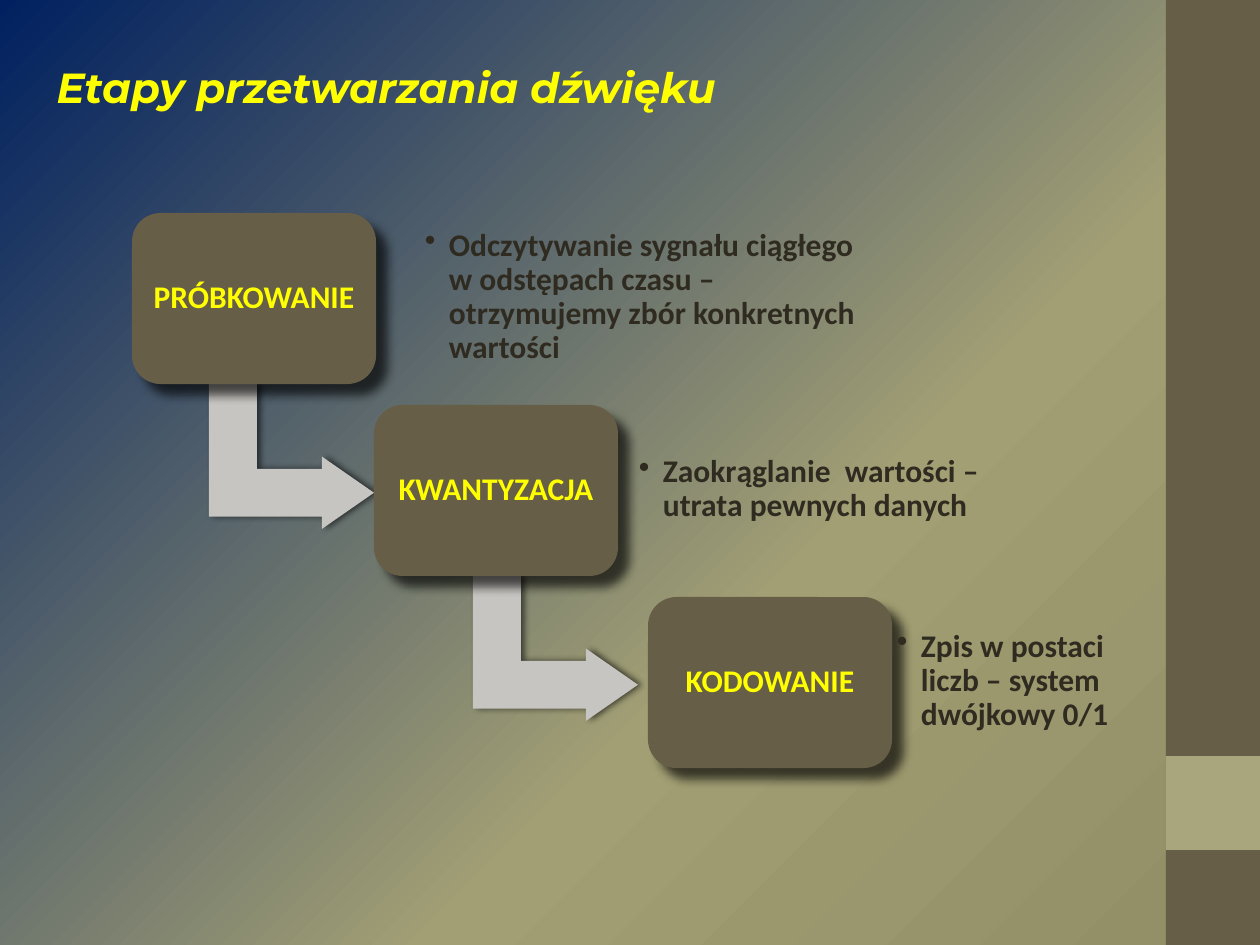
"""Build a slide showing the stages of sound processing as a stepped flow."""
from dataclasses import dataclass

from lxml import etree
from pptx import Presentation
from pptx.dml.color import RGBColor
from pptx.enum.shapes import MSO_SHAPE
from pptx.enum.text import MSO_ANCHOR, PP_ALIGN
from pptx.oxml.ns import qn
from pptx.util import Emu, Pt

RECTANGLE = MSO_SHAPE.RECTANGLE
ROUNDED = MSO_SHAPE.ROUNDED_RECTANGLE
BENT_ARROW = MSO_SHAPE.BENT_UP_ARROW
MIDDLE = MSO_ANCHOR.MIDDLE
LEFT, CENTER = PP_ALIGN.LEFT, PP_ALIGN.CENTER

TITLE_ONLY = 5
EMU_PER_PX = 914400 / 126
WIDTH, HEIGHT = 1260, 945
SIDEBAR_LEFT, ACCENT_TOP, ACCENT_SIZE = 1166, 756, 94
FIRST_TOP, ROW_STEP = 213, 192
BOX_WIDTH, BOX_HEIGHT = 244, 171
ARROW_WIDTH, ARROW_HEIGHT = 145, 165
NOTE_OFFSET, NOTE_HEIGHT = 16, 137
INSET, BULLET_INDENT = 9, 24

STAGES = [
    ("PRÓBKOWANIE", 132, 209, 416, 455,
     "Odczytywanie sygnału ciągłego w odstępach czasu – "
     "otrzymujemy zbór konkretnych wartości"),
    ("KWANTYZACJA", 374, 473, 630, 401,
     "Zaokrąglanie  wartości – utrata pewnych danych"),
    ("KODOWANIE", 648, None, 888, 241,
     "Zpis w postaci liczb – system dwójkowy 0/1"),
]


@dataclass(frozen=True)
class Theme:
    """Colours, fonts and type sizes of the slide."""
    brown: str = "675E47"
    olive: str = "A9A57C"
    grey: str = "C7C5C1"
    yellow: str = "FFFF00"
    ink: str = "2F2B20"
    shade: str = "000000"
    gradient: tuple = ((0, "002060"), (62, "A29F74"), (100, "918D65"))
    title_font: str = "Montserrat"
    body_font: str = "Calibri"
    title_size: int = 24
    body_size: int = 18


THEME = Theme()


def px(length):
    """Turn pixels into EMU."""
    return Emu(round(length * EMU_PER_PX))


def add_node(parent, tag, **attributes):
    """Append a DrawingML element with the given attributes."""
    values = {name: str(value) for name, value in attributes.items()}
    return etree.SubElement(parent, qn(tag), values)


def paint_background(slide):
    """Fill the background with the diagonal gradient."""
    fill = slide.background.fill
    fill.gradient()
    fill.gradient_angle = 315
    stops = slide.background._cSld.find(".//" + qn("a:gsLst"))
    for stop in list(stops):
        stops.remove(stop)
    for percent, color in THEME.gradient:
        stop = add_node(stops, "a:gs", pos=percent * 1000)
        add_node(stop, "a:srgbClr", val=color)


def add_block(slide, preset, left, top, width, height, color):
    """Add a filled preset shape without outline or shadow."""
    block = slide.shapes.add_shape(preset, px(left), px(top), px(width), px(height))
    block.shadow.inherit = False
    block.fill.solid()
    block.fill.fore_color.rgb = RGBColor.from_string(color)
    block.line.fill.background()
    return block


def add_shadow(block, alpha, blur, distance, angle):
    """Give a block an outer shadow, in percent, points and degrees."""
    effects = block._element.spPr.find(qn("a:effectLst"))
    shadow = add_node(effects, "a:outerShdw", blurRad=Pt(blur), dist=Pt(distance),
                      dir=angle * 60000, algn="ctr", rotWithShape=0)
    color = add_node(shadow, "a:srgbClr", val=THEME.shade)
    add_node(color, "a:alpha", val=alpha * 1000)


def write(frame, text, font_name, size, color, alignment, italic=False):
    """Write one bold run in a vertically centred frame and return its paragraph."""
    frame.word_wrap = True
    frame.vertical_anchor = MIDDLE
    paragraph = frame.paragraphs[0]
    paragraph.alignment = alignment
    run = paragraph.add_run()
    run.text = text
    run.font.name = font_name
    run.font.size = Pt(size)
    run.font.bold = True
    run.font.italic = italic
    run.font.color.rgb = RGBColor.from_string(color)
    return paragraph


def write_body(frame, text, color, alignment):
    """Write body text with tight lines and even insets."""
    frame.margin_left = frame.margin_right = px(INSET)
    frame.margin_top = frame.margin_bottom = px(INSET)
    paragraph = write(frame, text, THEME.body_font, THEME.body_size, color, alignment)
    paragraph.line_spacing = 0.9
    return paragraph


def set_title(slide, text):
    """Place and format the title placeholder."""
    title = slide.shapes.title
    title.left, title.top, title.width, title.height = map(px, (44, 55, 1068, 63))
    write(title.text_frame, text, THEME.title_font, THEME.title_size,
          THEME.yellow, LEFT, italic=True)


def add_sidebar(slide):
    """Add the right-hand band and its accent square."""
    add_block(slide, RECTANGLE, SIDEBAR_LEFT, 0, WIDTH - SIDEBAR_LEFT, HEIGHT, THEME.brown)
    add_block(slide, RECTANGLE, SIDEBAR_LEFT, ACCENT_TOP, ACCENT_SIZE, ACCENT_SIZE, THEME.olive)


def add_arrow(slide, left, top):
    """Add a bent arrow whose turned outline starts at left and top."""
    shift = (ARROW_HEIGHT - ARROW_WIDTH) / 2
    arrow = add_block(slide, BENT_ARROW, left + shift, top - shift,
                      ARROW_WIDTH, ARROW_HEIGHT, THEME.grey)
    arrow.rotation = 90
    for index, ratio in enumerate((0.33, 0.25, 0.36)):
        arrow.adjustments[index] = ratio
    add_shadow(arrow, alpha=60, blur=4, distance=2, angle=0)


def add_box(slide, label, left, top):
    """Add a labelled stage box."""
    box = add_block(slide, ROUNDED, left, top, BOX_WIDTH, BOX_HEIGHT, THEME.brown)
    add_shadow(box, alpha=66, blur=6, distance=9, angle=45)
    write_body(box.text_frame, label, THEME.yellow, CENTER)


def add_note(slide, text, left, top, width):
    """Add the bulleted explanation beside a stage box."""
    note = slide.shapes.add_textbox(px(left), px(top), px(width), px(NOTE_HEIGHT))
    paragraph = write_body(note.text_frame, text, THEME.ink, LEFT)
    paragraph.level = 1
    properties = paragraph._p.get_or_add_pPr()
    properties.set("marL", str(px(BULLET_INDENT)))
    properties.set("indent", str(-px(BULLET_INDENT)))
    add_node(properties, "a:buChar", char="•")


def main():
    """Build and save the slide."""
    deck = Presentation()
    deck.slide_width, deck.slide_height = px(WIDTH), px(HEIGHT)
    slide = deck.slides.add_slide(deck.slide_layouts[TITLE_ONLY])
    paint_background(slide)
    add_sidebar(slide)
    set_title(slide, "Etapy przetwarzania dźwięku")
    for row, (label, box_left, arrow_left, note_left, note_width, note) in enumerate(STAGES):
        top = FIRST_TOP + row * ROW_STEP
        if arrow_left is not None:
            add_arrow(slide, arrow_left, top + BOX_HEIGHT)
        add_box(slide, label, box_left, top)
        add_note(slide, note, note_left, top + NOTE_OFFSET, note_width)
    deck.save("out.pptx")


if __name__ == "__main__":
    main()
